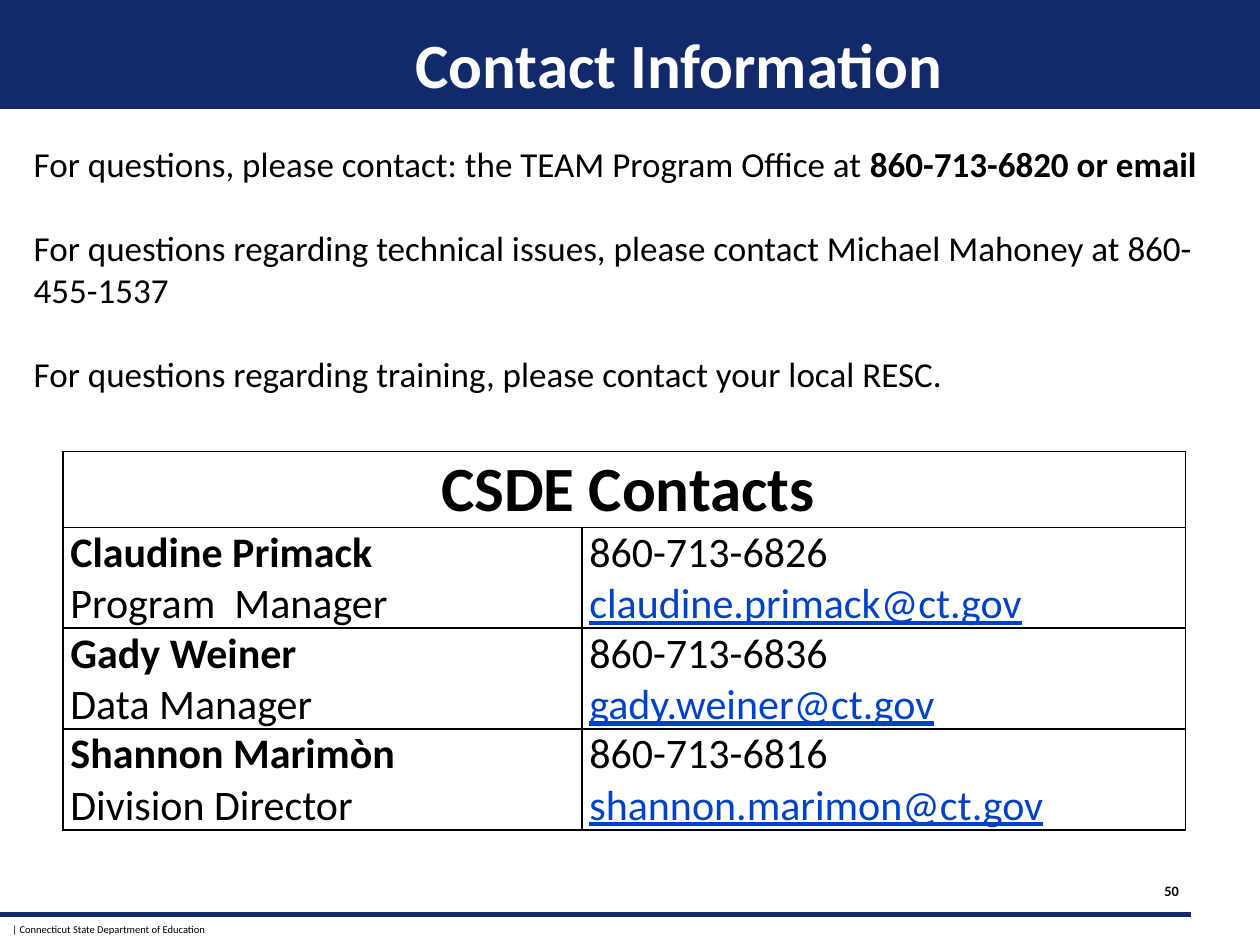
from lxml import etree
from pptx import Presentation
from pptx.dml.color import RGBColor
from pptx.enum.shapes import MSO_CONNECTOR, MSO_SHAPE
from pptx.enum.text import MSO_ANCHOR, PP_ALIGN
from pptx.oxml.ns import qn
from pptx.util import Cm, Pt

COLORS = {"navy": "122A6C", "white": "FFFFFF", "black": "000000", "link": "0042C7"}

INTRO = [
    [("For questions, please contact: the TEAM Program Office at ", False),
     ("860-713-6820 or email", True)],
    [("For questions regarding technical issues, please contact "
      "Michael Mahoney at 860-455-1537", False)],
    [("For questions regarding training, please contact your local RESC.", False)],
]
CONTACTS = [
    ("Claudine Primack", "Program  Manager", "860-713-6826", "claudine.primack@ct.gov"),
    ("Gady Weiner", "Data Manager", "860-713-6836", "gady.weiner@ct.gov"),
    ("Shannon Marimòn", "Division Director", "860-713-6816", "shannon.marimon@ct.gov"),
]


def rgb(name):
    return RGBColor.from_string(COLORS[name])


def write(paragraph, text, size=24, color="black", bold=False, underline=False,
          align=PP_ALIGN.LEFT):
    paragraph.alignment = align
    run = paragraph.add_run()
    run.text = text
    font = run.font
    font.name, font.size, font.bold, font.underline = "Calibri", Pt(size), bold, underline
    font.color.rgb = rgb(color)


def set_margins(holder, left=0, top=0, right=0, bottom=0):
    holder.margin_left, holder.margin_top = Cm(left), Cm(top)
    holder.margin_right, holder.margin_bottom = Cm(right), Cm(bottom)


def add_frame(slide, left, top, width, height):
    frame = slide.shapes.add_textbox(Cm(left), Cm(top), Cm(width), Cm(height)).text_frame
    frame.word_wrap = True
    return frame


def add_header(slide, left, top, width, height):
    band = slide.shapes.add_shape(
        MSO_SHAPE.RECTANGLE, Cm(left), Cm(top), Cm(width), Cm(height))
    band.shadow.inherit = False
    band.fill.solid()
    band.fill.fore_color.rgb = band.line.color.rgb = rgb("navy")
    band.line.width = Pt(2)

    title = slide.shapes.title
    title.element.addprevious(band.element)  # keeps the band behind the title
    title.left, title.top = Cm(left + 0.2), Cm(top + 0.51)
    title.width, title.height = Cm(width - 2.54), Cm(1.55)
    frame = title.text_frame
    set_margins(frame, left=4.11)
    frame.vertical_anchor = MSO_ANCHOR.MIDDLE
    write(frame.paragraphs[0], "Contact Information", size=36, color="white",
          bold=True, align=PP_ALIGN.CENTER)


def add_intro(slide, left, top, width, height):
    frame = add_frame(slide, left, top, width, height)
    for index, pieces in enumerate(INTRO):
        paragraph = frame.add_paragraph() if index else frame.paragraphs[0]
        if index:
            paragraph.space_before = Pt(24)
        for text, bold in pieces:
            write(paragraph, text, size=20, bold=bold)


def style_cell(cell):
    """Clear the fill, set the margins and draw a thin black border."""
    set_margins(cell, left=0.15)
    properties = cell._tc.get_or_add_tcPr()
    for side in ("a:lnL", "a:lnR", "a:lnT", "a:lnB"):
        border = etree.SubElement(properties, qn(side), w=str(Pt(1)))
        fill = etree.SubElement(border, qn("a:solidFill"))
        etree.SubElement(fill, qn("a:srgbClr"), val=COLORS["black"])
    cell.fill.background()


def add_contacts(slide, left, top, width, height):
    heading_height = 1.53
    table = slide.shapes.add_table(
        len(CONTACTS) + 1, 2, Cm(left), Cm(top), Cm(width), Cm(height)).table
    table.first_row = table.horz_banding = False
    name_width = 10.46
    table.columns[0].width = Cm(name_width)
    table.columns[1].width = Cm(width - name_width)
    for index, row in enumerate(table.rows):
        row.height = Cm((height - heading_height) / len(CONTACTS) if index
                        else heading_height)
        for cell in row.cells:
            style_cell(cell)

    heading = table.cell(0, 0)
    heading.merge(table.cell(0, 1))
    write(heading.text_frame.paragraphs[0], "CSDE Contacts", size=36, bold=True,
          align=PP_ALIGN.CENTER)
    for row, (name, role, phone, email) in enumerate(CONTACTS, start=1):
        person = table.cell(row, 0).text_frame
        write(person.paragraphs[0], name, bold=True)
        write(person.add_paragraph(), role)
        reach = table.cell(row, 1).text_frame
        write(reach.paragraphs[0], phone)
        write(reach.add_paragraph(), email, color="link", underline=True)


def add_footer(slide, left, top, width):
    rule_top = top + 0.79
    rule = slide.shapes.add_connector(
        MSO_CONNECTOR.STRAIGHT, Cm(left), Cm(rule_top), Cm(left + width), Cm(rule_top))
    rule.line.color.rgb = rgb("navy")
    rule.line.width = Pt(3)
    etree.SubElement(rule.element.spPr, qn("a:effectLst"))

    department = add_frame(slide, left, top + 0.84, 12.7, 0.51)
    write(department.paragraphs[0], "| Connecticut State Department of Education", size=6)
    number = add_frame(slide, left + width - 0.8, top, 0.84, 0.64)
    set_margins(number, 0.1, 0.13, 0.1, 0.13)
    write(number.paragraphs[0], "50", size=8.2, bold=True, align=PP_ALIGN.CENTER)


def main():
    deck = Presentation()
    deck.slide_width, deck.slide_height = Cm(25.4), Cm(19.05)
    slide = deck.slides.add_slide(deck.slide_layouts.get_by_name("Title Only"))
    add_header(slide, 0, 0, 25.4, 2.16)
    add_footer(slide, 0, 17.65, 24)
    add_contacts(slide, 1.27, 9.1, 22.63, 7.62)
    add_intro(slide, 0.43, 2.74, 24.05, 5.38)
    deck.save("out.pptx")


if __name__ == "__main__":
    main()
